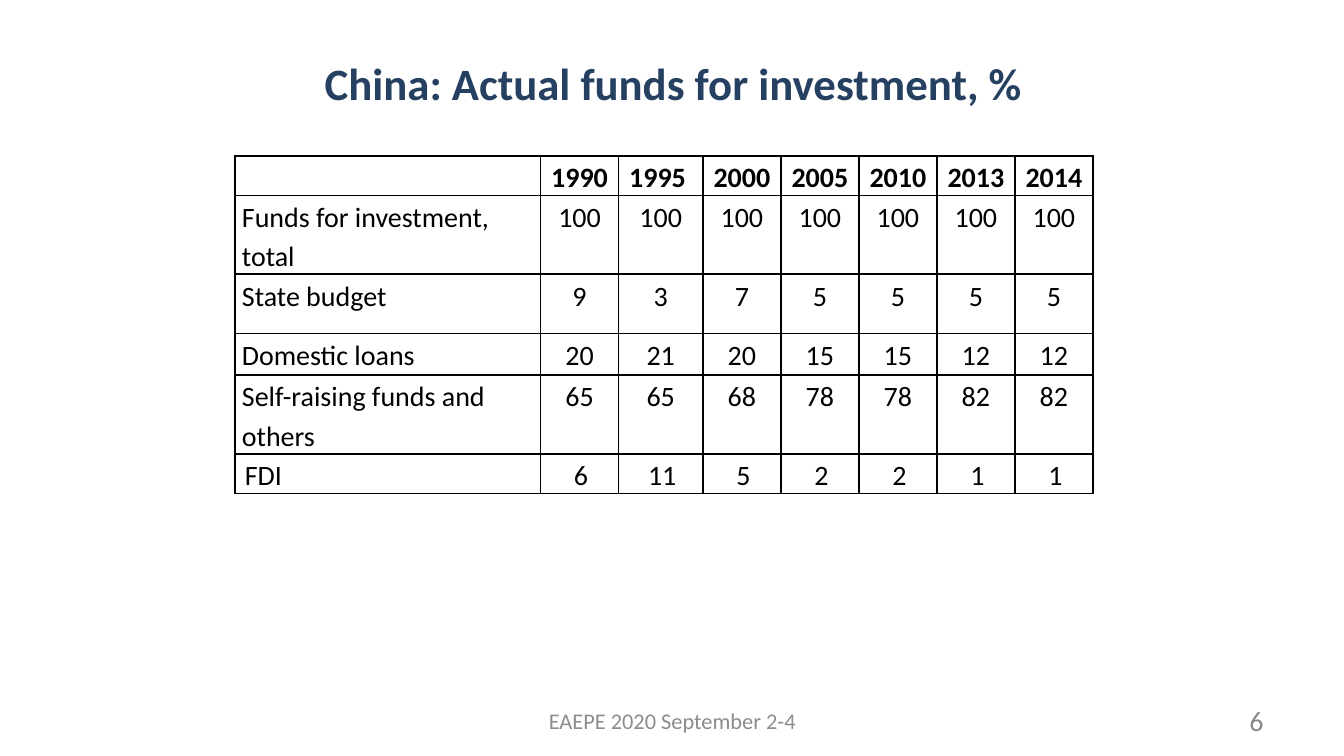
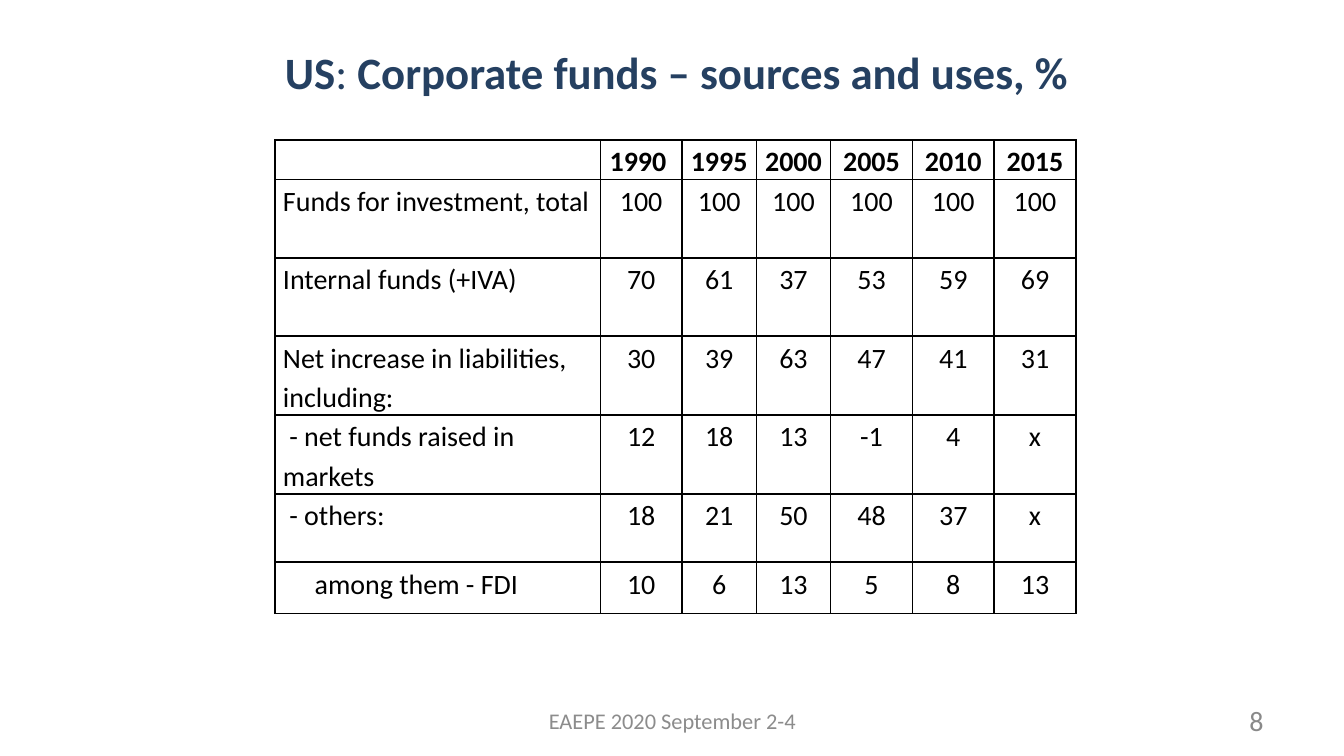
from lxml import etree
from pptx import Presentation
from pptx.dml.color import RGBColor
from pptx.enum.text import MSO_ANCHOR, PP_ALIGN
from pptx.oxml.ns import qn
from pptx.util import Pt

LEFT, CENTER, RIGHT = PP_ALIGN.LEFT, PP_ALIGN.CENTER, PP_ALIGN.RIGHT
MIDDLE = MSO_ANCHOR.MIDDLE
NAVY = RGBColor(0x25, 0x40, 0x61)
BLACK = RGBColor(0, 0, 0)
NUMBER_GRAY = RGBColor(0x89, 0x89, 0x89)
FOOTER_GRAY = RGBColor(0x8C, 0x8C, 0x8C)

TITLE_FONT = {"size": Pt(24), "color": NAVY, "bold": True}
HEAD_FONT = {"size": Pt(15), "color": BLACK, "bold": True}
BODY_FONT = {**HEAD_FONT, "bold": False}
NUMBER_FONT = {"size": Pt(15), "color": NUMBER_GRAY}
FOOTER_FONT = {"size": Pt(12), "color": FOOTER_GRAY}

FOOTER = "EAEPE 2020 September 2-4"
FOOTER_BOX = (246.2, 375.1, 228.2, 21.6)
NUMBER_BOX = (516.2, 375.1, 167.8, 21.6)

SLIDES = [
    {
        "number": 6,
        "title": [("China: Actual funds for investment, %", True)],
        "title_box": (113, 19.4, 495.4, 49.5),
        "table_at": (126, 83.5),
        "columns": [163.6, 41.8, 45.2] + [41.8] * 5,
        "row_heights": [20.9, 42.1, 31.7, 22.4, 42.1, 20.9],
        "side_inset": 3.6,
        "space_after": 10,
        "years": ["1990", "1995 ", "2000", "2005", "2010", "2013", "2014"],
        "rows": [
            ("Funds for investment,\ntotal", [100] * 7),
            ("State budget", [9, 3, 7, 5, 5, 5, 5]),
            ("Domestic loans", [20, 21, 20, 15, 15, 12, 12]),
            ("Self-raising funds and\nothers", [65, 65, 68, 78, 78, 82, 82]),
            ("FDI", [6, 11, 5, 2, 2, 1, 1]),
        ],
        "label_indents": {"FDI": 1.6},
        "value_indents": {"FDI": 1.6},
    },
    {
        "number": 8,
        "title": [("US", True), (": ", False),
                  ("Corporate funds – sources and uses, % ", True)],
        "title_box": (117.4, 10.8, 495.4, 55.4),
        "table_at": (147.4, 75),
        "columns": [174.2, 43.8, 39.8, 39.8] + [43.8] * 3,
        "row_heights": [20.9, 42, 42, 42, 42, 36.6, 27.5],
        "side_inset": 4.2,
        "space_after": 0,
        "years": ["1990 ", "1995", "2000", "2005", "2010", "2015"],
        "rows": [
            ("Funds for investment, total", [100] * 6),
            ("Internal funds (+IVA)", [70, 61, 37, 53, 59, 69]),
            ("Net increase in liabilities, including:", [30, 39, 63, 47, 41, 31]),
            ("- net funds raised in markets", [12, 18, 13, -1, 4, "x"]),
            ("- others:", [18, 21, 50, 48, 37, "x"]),
            ("among them - FDI", [10, 6, 13, 5, 8, 13]),
        ],
        "label_indents": {"- net funds raised in markets": 3.4, "- others:": 3.4,
                          "among them - FDI": 17},
        "value_indents": {},
    },
]


def add_span(para, text, font):
    span = para.add_run()
    span.text = text
    span.font.name = "Calibri"
    for name, value in font.items():
        if name == "color":
            span.font.color.rgb = value
        else:
            setattr(span.font, name, value)


def add_line(slide, bounds, text, font, align):
    box = slide.shapes.add_textbox(*map(Pt, bounds))
    frame = box.text_frame
    frame.word_wrap = True
    frame.vertical_anchor = MIDDLE
    para = frame.paragraphs[0]
    para.alignment = align
    add_span(para, text, font)


def add_title(slide, spans, bounds):
    title = slide.shapes.title
    for name, value in zip(("left", "top", "width", "height"), bounds):
        setattr(title, name, Pt(value))
    title.text_frame.vertical_anchor = MIDDLE
    para = title.text_frame.paragraphs[0]
    para.alignment = CENTER
    for text, bold in spans:
        add_span(para, text, {**TITLE_FONT, "bold": bold})


def style_cell(cell, side_inset):
    for name, inset in {"left": side_inset, "right": side_inset,
                        "top": 0, "bottom": 0}.items():
        setattr(cell, f"margin_{name}", Pt(inset))
    properties = cell._tc.get_or_add_tcPr()
    for edge in ("a:lnL", "a:lnR", "a:lnT", "a:lnB"):
        line = etree.SubElement(properties, qn(edge), w=str(Pt(1)))
        fill = etree.SubElement(line, qn("a:solidFill"))
        etree.SubElement(fill, qn("a:srgbClr"), val=str(BLACK))
    cell.fill.background()


def fill_cell(cell, text, font, align, space_after, indent):
    frame = cell.text_frame
    for index, line in enumerate(text.split("\n")):
        para = frame.add_paragraph() if index else frame.paragraphs[0]
        para.alignment = align
        para.line_spacing = 1.15
        para.space_after = Pt(space_after)
        if indent:
            para._p.get_or_add_pPr().set("indent", str(Pt(indent)))
        if line:
            add_span(para, line, font)
        else:
            etree.SubElement(para._p, qn("a:endParaRPr"), sz="1500")


def add_grid(slide, page):
    columns, heights = page["columns"], page["row_heights"]
    bounds = (*page["table_at"], sum(columns), sum(heights))
    table = slide.shapes.add_table(len(heights), len(columns), *map(Pt, bounds)).table
    table.first_row = table.horz_banding = False
    for column, width in zip(table.columns, columns):
        column.width = Pt(width)
    for row, height in zip(table.rows, heights):
        row.height = Pt(height)
    for row_index, (label, values) in enumerate([("", page["years"])] + page["rows"]):
        font = BODY_FONT if row_index else HEAD_FONT
        for column_index, content in enumerate([label, *values]):
            cell = table.cell(row_index, column_index)
            style_cell(cell, page["side_inset"])
            align, after, indents = (
                (CENTER, page["space_after"], page["value_indents"])
                if column_index else (LEFT, 0, page["label_indents"]))
            fill_cell(cell, str(content), font, align, after, indents.get(label, 0))


def main():
    """Build the two funding table slides."""
    deck = Presentation()
    deck.slide_width, deck.slide_height = Pt(720), Pt(405)
    title_only = deck.slide_layouts[5]
    for page in SLIDES:
        slide = deck.slides.add_slide(title_only)
        add_title(slide, page["title"], page["title_box"])
        add_grid(slide, page)
        add_line(slide, NUMBER_BOX, str(page["number"]), NUMBER_FONT, RIGHT)
        add_line(slide, FOOTER_BOX, FOOTER, FOOTER_FONT, CENTER)
    deck.save("out.pptx")


if __name__ == "__main__":
    main()
